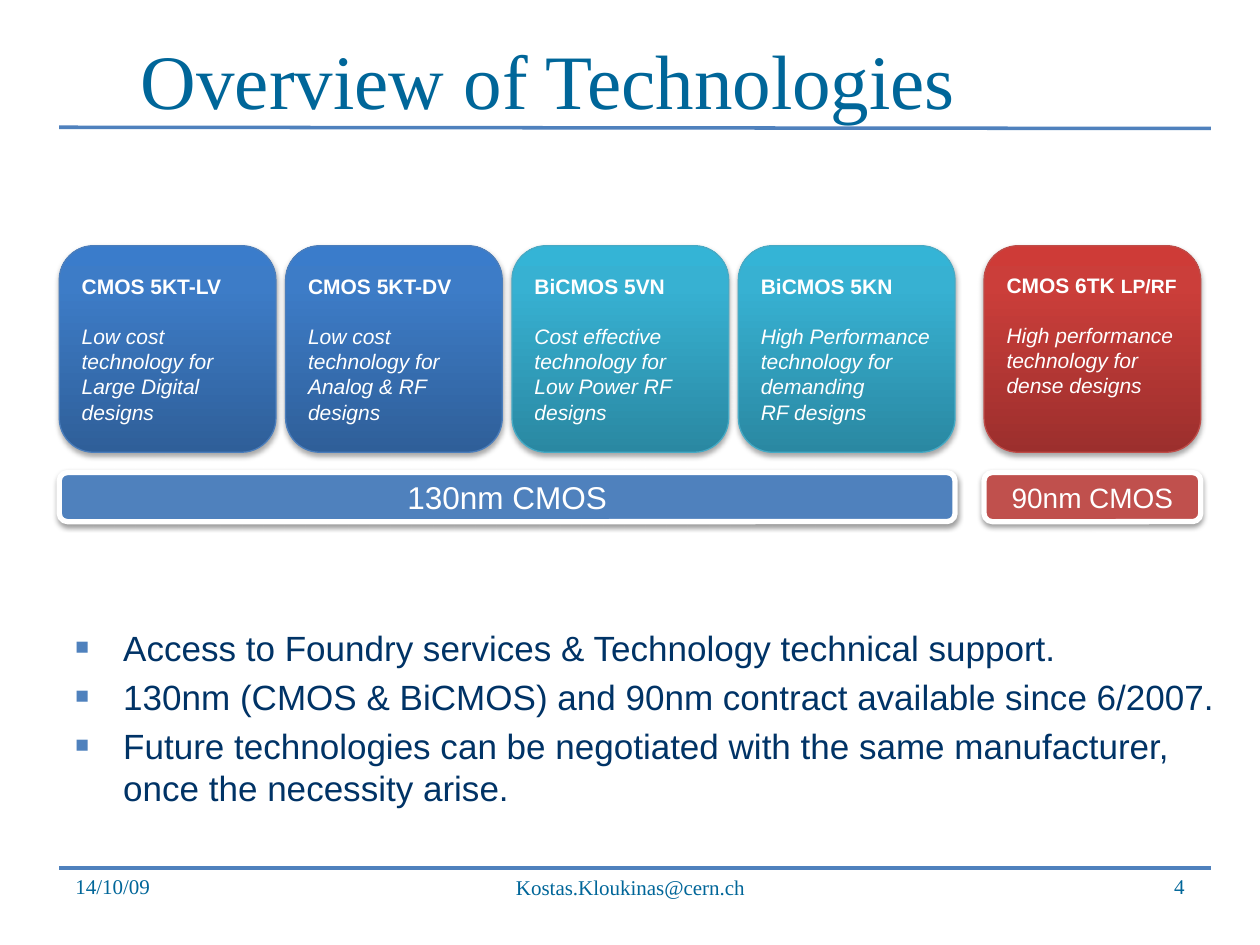
from copy import deepcopy
from lxml.etree import SubElement
from pptx import Presentation
from pptx.dml.color import RGBColor
from pptx.enum.shapes import MSO_CONNECTOR, MSO_SHAPE
from pptx.enum.text import MSO_ANCHOR, PP_ALIGN
from pptx.oxml.ns import qn
from pptx.util import Inches, Pt

WIDE, HIGH = 10, 7.5
SERIF, SANS = "Times New Roman", "Arial"
HUES = {"rule": "4F81BD", "title": "006699", "body": "003366", "white": "FFFFFF",
        "black": "000000", "red": "C0504D"}
# Gradient stops from the bottom up, then the outline
TONES = {"blue": (("2F5F99", "3D7CC7", "3A7CCB"), "4B7EBC"),
         "teal": (("2A88A2", "37B1D2", "34B4D6"), "46AAC5"),
         "red": (("9C2F2D", "CB3E3A", "CE3B37"), "BF4C48")}
STOPS = (0, 0.8, 1)

TITLE = "Overview of Technologies"
# Tone, name, small suffix, description paragraphs
CARDS = [
    ("blue", "CMOS 5KT-LV", "", ["Low cost technology for", "Large Digital designs"]),
    ("blue", "CMOS 5KT-DV", "", ["Low cost technology for", "Analog & RF designs"]),
    ("teal", "BiCMOS 5VN", "", ["Cost effective technology for Low Power RF designs"]),
    ("teal", "BiCMOS 5KN", "", ["High Performance technology for demanding\vRF designs"]),
    ("red", "CMOS 6TK ", "LP/RF", ["High performance technology for dense designs"]),
]
POINTS = [
    "Access to Foundry services & Technology technical support.",
    "130nm (CMOS & BiCMOS) and 90nm contract available since 6/2007.",
    "Future technologies can be negotiated with the same manufacturer, "
    "once the necessity arise.",
]
FOOT = [
    ("14/10/09", PP_ALIGN.LEFT, (0.5, 6.84, 2.33, 0.34)),
    ("Kostas.Kloukinas@cern.ch", PP_ALIGN.CENTER, (3.42, 6.92, 3.17, 0.27)),
    ("4", PP_ALIGN.RIGHT, (7.17, 6.92, 2.33, 0.26)),
]
RULES = [(1.01, 1.02), (6.89, 6.89)]

# Four cards share the first span; the fifth stands apart
LEFT, SPAN, LAST = 0.47, 7.11, 7.81
CARD_W, CARD_H, CARD_Y = 1.72, 1.64, 1.95
STEP = (SPAN - CARD_W) / 3
BARS = [("130nm CMOS", 18, "rule", LEFT, SPAN), ("90nm CMOS", 16, "red", LAST, CARD_W)]
BAR_Y, BAR_H = 3.75, 0.39

deck = Presentation()
deck.slide_width, deck.slide_height = Inches(WIDE), Inches(HIGH)
slide = deck.slides.add_slide(deck.slide_layouts[6])


def rgb(code):
    return RGBColor.from_string(code)


def style(font, face, size, hue):
    font.name, font.size = face, Pt(size)
    font.color.rgb = rgb(HUES[hue])


def add_text(box, anchor):
    frame = slide.shapes.add_textbox(*map(Inches, box)).text_frame
    frame.word_wrap, frame.vertical_anchor = True, anchor
    return frame


def add_block(box, edge, width, alpha, dist):
    """Rounded rectangle with an outline and a soft shadow below."""
    shape = slide.shapes.add_shape(MSO_SHAPE.ROUNDED_RECTANGLE, *map(Inches, box))
    shape.line.color.rgb, shape.line.width = rgb(edge), Pt(width)
    shape.shadow.inherit = False
    glow = SubElement(shape._element.spPr.find(qn("a:effectLst")), qn("a:outerShdw"),
                      blurRad=str(Pt(3.1)), dist=str(Pt(dist)), dir="5400000",
                      rotWithShape="0")
    tint = SubElement(glow, qn("a:srgbClr"), val=HUES["black"])
    SubElement(tint, qn("a:alpha"), val=str(alpha * 1000))
    shape.text_frame.word_wrap = True
    shape.text_frame.vertical_anchor = MSO_ANCHOR.MIDDLE
    return shape


def shade(shape, codes):
    shape.fill.gradient()
    shape.fill.gradient_angle = 90
    stops = shape._element.spPr.find(".//" + qn("a:gsLst"))
    stops.append(deepcopy(stops[-1]))
    for stop, place, code in zip(shape.fill.gradient_stops, STOPS, codes):
        stop.position, stop.color.rgb = place, rgb(code)


def add_card(x, tone, name, tail, notes):
    codes, edge = TONES[tone]
    shape = add_block((x, CARD_Y, CARD_W, CARD_H), edge, 0.75, 35, 1.8)
    shade(shape, codes)
    frame = shape.text_frame
    head = frame.paragraphs[0]
    head.add_run().text = name
    if tail:
        run = head.add_run()
        run.text, run.font.size = tail, Pt(11)
        frame.margin_bottom = Inches(0.27)
    for i, note in enumerate(notes):
        para = frame.add_paragraph()
        para.text = note
        para.font.italic = True
        if i == 0:
            para.space_before = Pt(14)
    for para in frame.paragraphs:
        para.alignment = PP_ALIGN.LEFT
        style(para.font, SANS, 12, "white")
    head.font.bold = True


def add_bullet(para):
    props = para._p.get_or_add_pPr()
    props.set("marL", str(Inches(0.38)))
    props.set("indent", str(Inches(-0.38)))
    SubElement(SubElement(props, qn("a:buClr")), qn("a:srgbClr"), val=HUES["rule"])
    SubElement(props, qn("a:buSzPct"), val="65000")
    SubElement(props, qn("a:buFont"), typeface=SANS)
    SubElement(props, qn("a:buChar"), char="■")


for y1, y2 in RULES:
    rule = slide.shapes.add_connector(MSO_CONNECTOR.STRAIGHT,
                                      *map(Inches, (LEFT, y1, 9.61, y2)))
    rule.line.color.rgb, rule.line.width = rgb(HUES["rule"]), Pt(2)
    SubElement(rule._element.spPr, qn("a:effectLst"))

frame = add_text((1.02, 0.21, 8.44, 0.79), MSO_ANCHOR.TOP)
frame.text = TITLE
style(frame.paragraphs[0].font, SERIF, 44, "title")

for text, align, box in FOOT:
    frame = add_text(box, MSO_ANCHOR.BOTTOM)
    frame.text = text
    frame.paragraphs[0].alignment = align
    style(frame.paragraphs[0].font, SERIF, 12, "title")

for i, card in enumerate(CARDS):
    add_card(LAST if i == 4 else LEFT + i * STEP, *card)

for text, size, hue, x, width in BARS:
    bar = add_block((x, BAR_Y, width, BAR_H), HUES["white"], 3, 38, 1.6)
    bar.fill.solid()
    bar.fill.fore_color.rgb = rgb(HUES[hue])
    bar.text_frame.text = text
    para = bar.text_frame.paragraphs[0]
    para.alignment = PP_ALIGN.CENTER
    style(para.font, SANS, size, "white")

frame = add_text((0.5, 4.92, 9.34, 1.51), MSO_ANCHOR.TOP)
for i, point in enumerate(POINTS):
    para = frame.add_paragraph() if i else frame.paragraphs[0]
    para.text = point
    add_bullet(para)
    if i:
        para.space_before = Pt(4)
    style(para.font, SANS, 20, "body")

deck.save("out.pptx")
